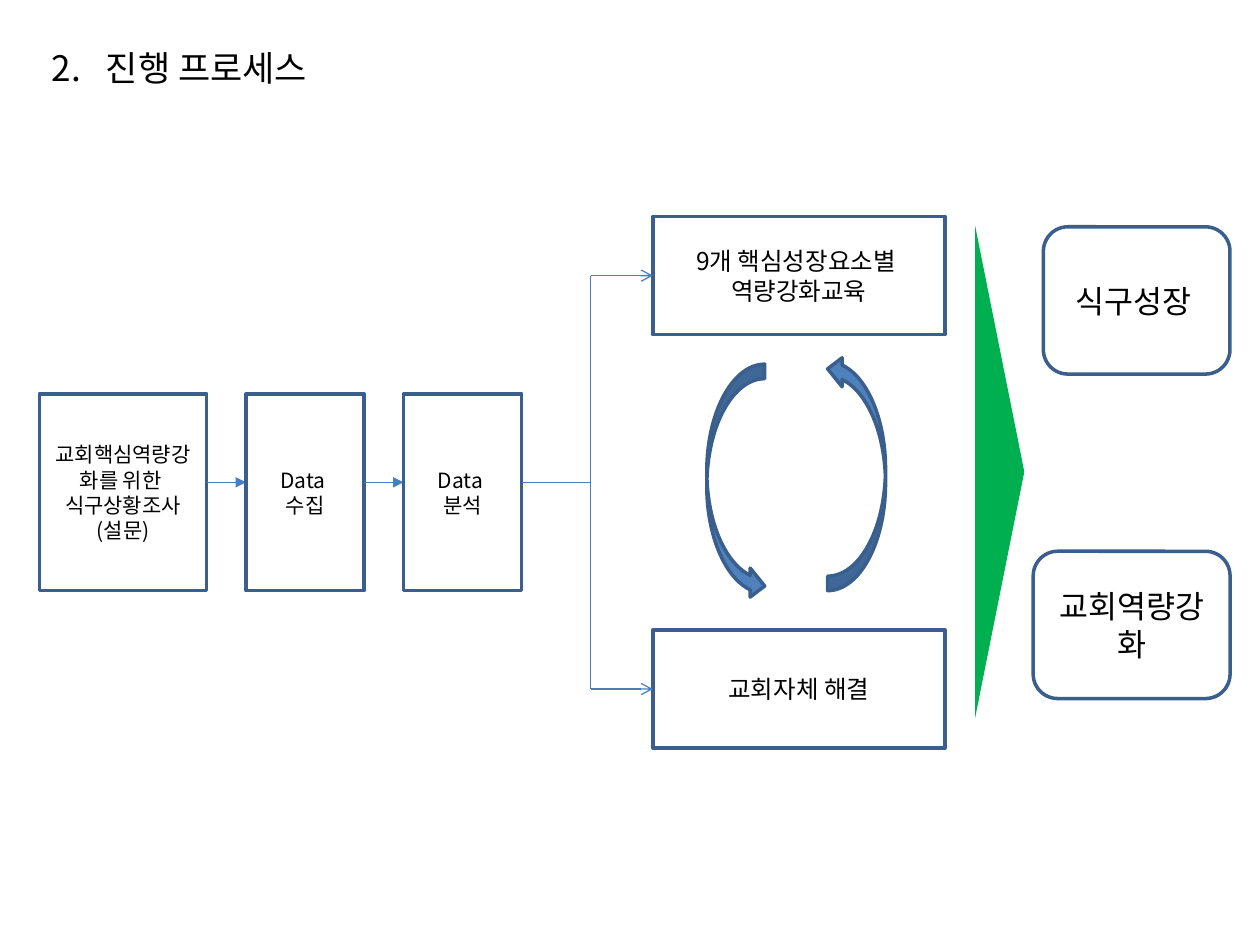
from lxml.etree import SubElement
from pptx import Presentation
from pptx.dml.color import RGBColor
from pptx.enum.shapes import MSO_CONNECTOR, MSO_SHAPE as Shape
from pptx.enum.text import MSO_ANCHOR, PP_ALIGN
from pptx.oxml import parse_xml
from pptx.oxml.ns import nsdecls, qn
from pptx.util import Inches, Pt

FONT = "Noto Sans CJK KR"
COLORS = {
    "text": "000000",
    "border": "3A5F8C",
    "link": "4B7EBC",
    "cycle": "4F81BD",
    "goal": "00B050",
}

# Grid: 32 columns by 24 rows of equal square cells
SLIDE_WIDTH, SLIDE_HEIGHT = Inches(10), Inches(7.5)
COLUMN, ROW = SLIDE_WIDTH / 32, SLIDE_HEIGHT / 24

STEP_TOP, STEP_HEIGHT, STEP_GAP = 10, 5, 1
FLOW_ROW = 12.25
TRUNK_COLUMN = 15


def grid(column, row):
    return round(column * COLUMN), round(row * ROW)


def color(name):
    return RGBColor.from_string(COLORS[name])


def style_text(para, size):
    for span in para.runs:
        span.font.size = Pt(size)
        span.font.name = FONT
        span.font.color.rgb = color("text")
        SubElement(span.font._element, qn("a:ea")).set("typeface", FONT)


def add_title(page, text):
    box = page.shapes.add_textbox(*grid(1, 0.5), *grid(13.75, 1.95))
    box.text_frame.word_wrap = True
    para = box.text_frame.paragraphs[0]
    para.text = text
    para.line_spacing = 1.5
    para.space_before = Pt(10)
    # Hanging indent for the number
    indent = Inches(0.43)
    properties = para._p.get_or_add_pPr()
    properties.set("marL", str(indent))
    properties.set("indent", str(-indent))
    style_text(para, 20)
    # Soft shadow under the letters
    shadow = parse_xml(
        f'<a:effectLst {nsdecls("a")}><a:outerShdw blurRad="38100" dist="38100" '
        'dir="5400000" algn="t"><a:srgbClr val="000000"><a:alpha val="43000"/>'
        "</a:srgbClr></a:outerShdw></a:effectLst>"
    )
    for span in para.runs:
        span.font._element.find(qn("a:solidFill")).addnext(shadow)


def add_figure(page, kind, place, size, fill=None, border=None, rotation=0):
    figure = page.shapes.add_shape(kind, *grid(*place), *grid(*size))
    figure.shadow.inherit = False
    figure.rotation = rotation
    if fill:
        figure.fill.solid()
        figure.fill.fore_color.rgb = color(fill)
    else:
        figure.fill.background()
    if border:
        figure.line.color.rgb = color(border)
        figure.line.width = Pt(2)
    else:
        figure.line.fill.background()
    return figure


def add_box(page, kind, place, size, text, font_size):
    box = add_figure(page, kind, place, size, border="border")
    frame = box.text_frame
    frame.word_wrap = True
    frame.vertical_anchor = MSO_ANCHOR.MIDDLE
    frame.text = text
    for para in frame.paragraphs:
        para.alignment = PP_ALIGN.CENTER
        style_text(para, font_size)
    return box


def add_link(page, start, end, head=None):
    link = page.shapes.add_connector(
        MSO_CONNECTOR.STRAIGHT, *grid(*start), *grid(*end))
    link.line.color.rgb = color("link")
    link.line.width = Pt(0.75)
    if head:
        SubElement(link.line._get_or_add_ln(), qn("a:tailEnd")).set("type", head)
    SubElement(link._element.spPr, qn("a:effectLst"))
    return link


def add_steps(page):
    steps = [
        (4.25, "교회핵심역량강화를 위한 \n식구상황조사(설문)"),
        (3, "Data \n수집"),
        (3, "Data \n분석"),
    ]
    left = 1
    for number, (width, text) in enumerate(steps, start=1):
        add_box(page, Shape.RECTANGLE, (left, STEP_TOP),
                (width, STEP_HEIGHT), text, 12)
        right = left + width
        # The last step leads into the branch trunk
        last = number == len(steps)
        left = TRUNK_COLUMN if last else right + STEP_GAP
        add_link(page, (right, FLOW_ROW), (left, FLOW_ROW),
                 None if last else "triangle")


def add_branches(page):
    left, width, height = 16.58, 7.42, 3
    branches = [(5.5, "9개 핵심성장요소별 \n역량강화교육"), (16, "교회자체 해결")]
    middles = [top + height / 2 for top, _ in branches]
    add_link(page, (TRUNK_COLUMN, middles[0]), (TRUNK_COLUMN, middles[1]))
    for (top, text), middle in zip(branches, middles):
        box = add_box(page, Shape.RECTANGLE, (left, top),
                      (width, height), text, 14)
        link = add_link(page, (TRUNK_COLUMN, middle), (left, middle), "arrow")
        link.end_connect(box, 1)


def add_cycle(page):
    for place, rotation in [((17.95, 9.25), 0), ((21.02, 9), 180)]:
        add_figure(page, Shape.CURVED_RIGHT_ARROW, place, (1.47, 6),
                   "cycle", "border", rotation)


def add_results(page):
    # Large pointer towards the results
    add_figure(page, Shape.ISOSCELES_TRIANGLE, (19.14, 11.36), (12.5, 1.25),
               "goal", rotation=90)
    right, height = 31.24, 3.74
    for top, width, text in [(5.76, 4.74, "식구성장 "), (14, 5, "교회역량강화")]:
        add_box(page, Shape.ROUNDED_RECTANGLE, (right - width, top),
                (width, height), text, 18)


def main():
    deck = Presentation()
    deck.slide_width, deck.slide_height = SLIDE_WIDTH, SLIDE_HEIGHT
    page = deck.slides.add_slide(deck.slide_layouts[6])
    add_title(page, "2.\t진행 프로세스")
    add_steps(page)
    add_branches(page)
    add_cycle(page)
    add_results(page)
    deck.save("out.pptx")


if __name__ == "__main__":
    main()
